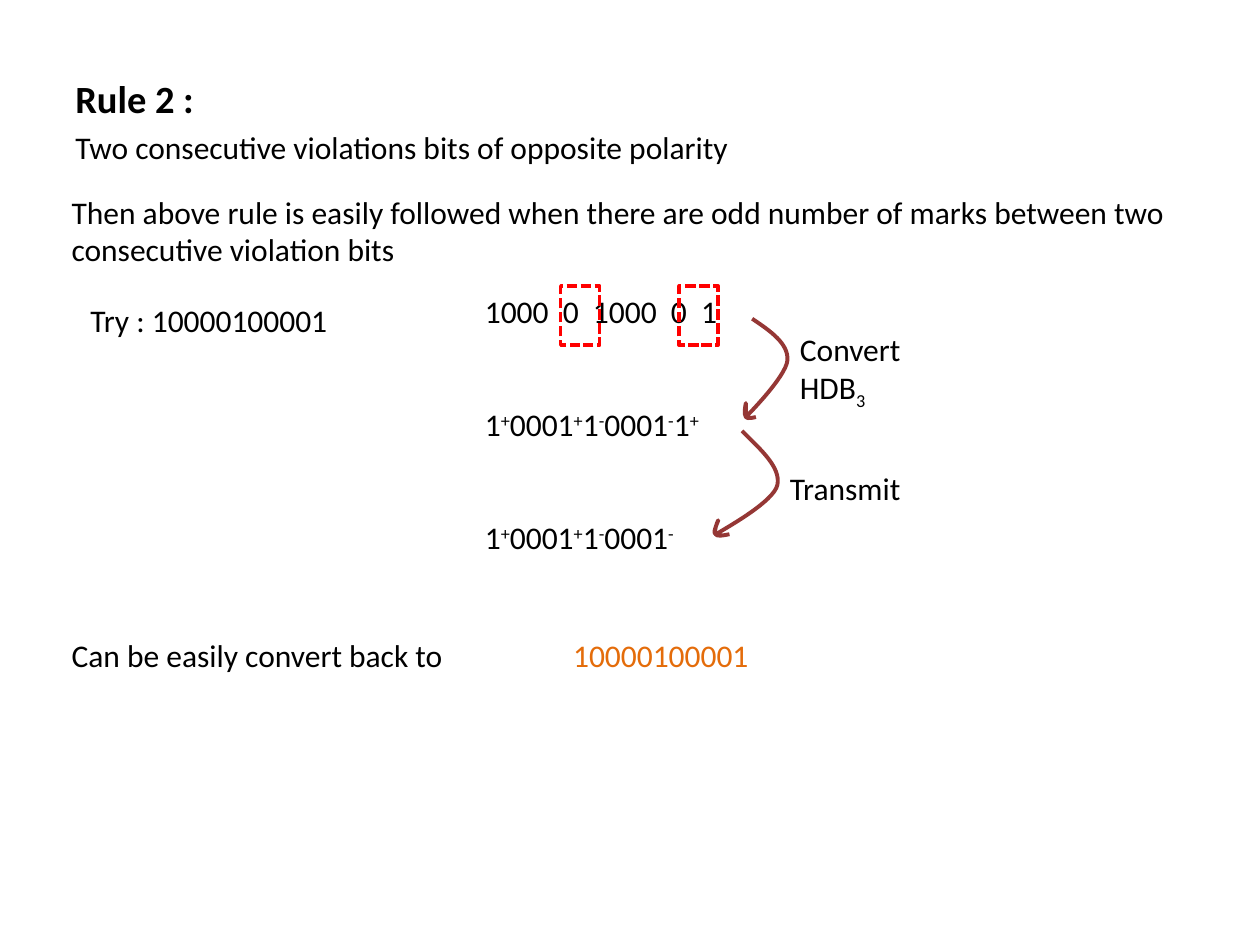
from lxml import etree
from pptx import Presentation
from pptx.dml.color import RGBColor
from pptx.enum.dml import MSO_LINE
from pptx.enum.shapes import MSO_SHAPE
from pptx.oxml.ns import qn
from pptx.util import Inches, Pt

BLACK = RGBColor(0x00, 0x00, 0x00)
ORANGE = RGBColor(0xE4, 0x6C, 0x0A)
RED = RGBColor(0xFF, 0x00, 0x00)
MAROON = RGBColor(0x95, 0x37, 0x35)
RECTANGLE = MSO_SHAPE.RECTANGLE
SHORT_DASH = MSO_LINE.SQUARE_DOT
BASELINES = {"+": "30000", "-": "30000", "₃": "-25000"}
CURVE_TAGS = {1: "a:lnTo", 3: "a:cubicBezTo"}


def add_text(page, left, top, width, height, lines, color=BLACK, gap=0):
    """Add a box with one paragraph per line; signs are raised and ₃ is lowered."""
    box = page.shapes.add_textbox(Inches(left), Inches(top), Inches(width), Inches(height))
    frame = box.text_frame
    frame.word_wrap = True
    for index, line in enumerate(lines):
        para = frame.paragraphs[0] if index == 0 else frame.add_paragraph()
        para.font.name = "Calibri"
        para.font.size = Pt(18)
        para.font.color.rgb = color
        para.space_before = Pt(gap if index else 0)
        for sign in BASELINES:
            line = line.replace(sign, f"|{sign}|")
        for part in filter(None, line.split("|")):
            span = para.add_run()
            span.text = part.replace("₃", "3")
            if part in BASELINES:
                span._r.get_or_add_rPr().set("baseline", BASELINES[part])
    return frame


def add_curve(page, left, top, width, height, start, segments):
    """Draw an open outline, in hundredths of an inch, from lines and cubic curves."""
    builder = page.shapes.build_freeform(left, top, scale=Inches(0.01))
    builder.add_line_segments([(left + width, top + height)], close=False)
    curve = builder.convert_to_shape()
    outline = curve._element.xpath(".//a:path")[0]
    for step in list(outline):
        outline.remove(step)
    for tag, points in [("a:moveTo", [start])] + [(CURVE_TAGS[len(s)], s) for s in segments]:
        step = etree.SubElement(outline, qn(tag))
        for x, y in points:
            etree.SubElement(step, qn("a:pt"), x=str(x - left), y=str(y - top))
    return curve


deck = Presentation()
deck.slide_width = Inches(10)
deck.slide_height = Inches(7.5)
page = deck.slides.add_slide(deck.slide_layouts[6])

# Rule and explanation
rule = add_text(page, 0.5, 0.55, 9, 0.86,
                ["Rule 2 :", "Two consecutive violations bits of opposite polarity"], gap=3.6)
heading = rule.paragraphs[0]
heading.font.size = Pt(22)
heading.font.bold = True
heading.space_before = Pt(4.4)

add_text(page, 0.47, 1.48, 9.06, 0.71,
         ["Then above rule is easily followed when there are odd number of marks "
          "between two consecutive violation bits"])
add_text(page, 0.62, 2.34, 2.34, 0.4, ["Try : 10000100001"])
add_text(page, 4.45, 5, 1.88, 0.4, ["10000100001"], color=ORANGE)

# Bit sequences, with the violation bits framed
add_text(page, 3.75, 2.27, 4.3, 2.22,
         ["1000  0  1000  0  1", "1+0001+1-0001-1+", "1+0001+1-0001-"], gap=43)
for left in (4.45, 5.39):
    frame = page.shapes.add_shape(RECTANGLE, Inches(left), Inches(2.27), Inches(0.31), Inches(0.47))
    frame.shadow.inherit = False
    frame.fill.background()
    frame.line.color.rgb = RED
    frame.line.width = Pt(2)
    frame.line.dash_style = SHORT_DASH

# Hand-drawn arrows between the sequences
convert_arrow = add_curve(page, 590, 253, 36, 80, (597, 253), [
    [(612, 263), (626, 273), (625, 286)],
    [(624, 299), (592, 331), (592, 331)],
    [(592, 320)],
    [(592, 320), (590, 329), (592, 331)],
    [(593, 333), (600, 331), (600, 331)],
])
transmit_arrow = add_curve(page, 563, 342, 57, 85, (589, 342), [
    [(604, 357), (620, 371), (617, 385)],
    [(614, 398), (578, 418), (570, 423)],
    [(563, 427), (571, 412), (570, 413)],
    [(570, 413), (566, 422), (568, 424)],
    [(569, 426), (574, 425), (579, 424)],
])
for arrow in (convert_arrow, transmit_arrow):
    arrow.shadow.inherit = False
    arrow.fill.background()
    arrow.line.color.rgb = MAROON
    arrow.line.width = Pt(2.25)

add_text(page, 6.25, 2.57, 1.25, 0.71, ["Convert HDB₃"])
add_text(page, 6.17, 3.67, 1.48, 0.4, ["Transmit"])
add_text(page, 0.47, 5, 3.59, 0.4, ["Can be easily convert back to"])

deck.save("out.pptx")
